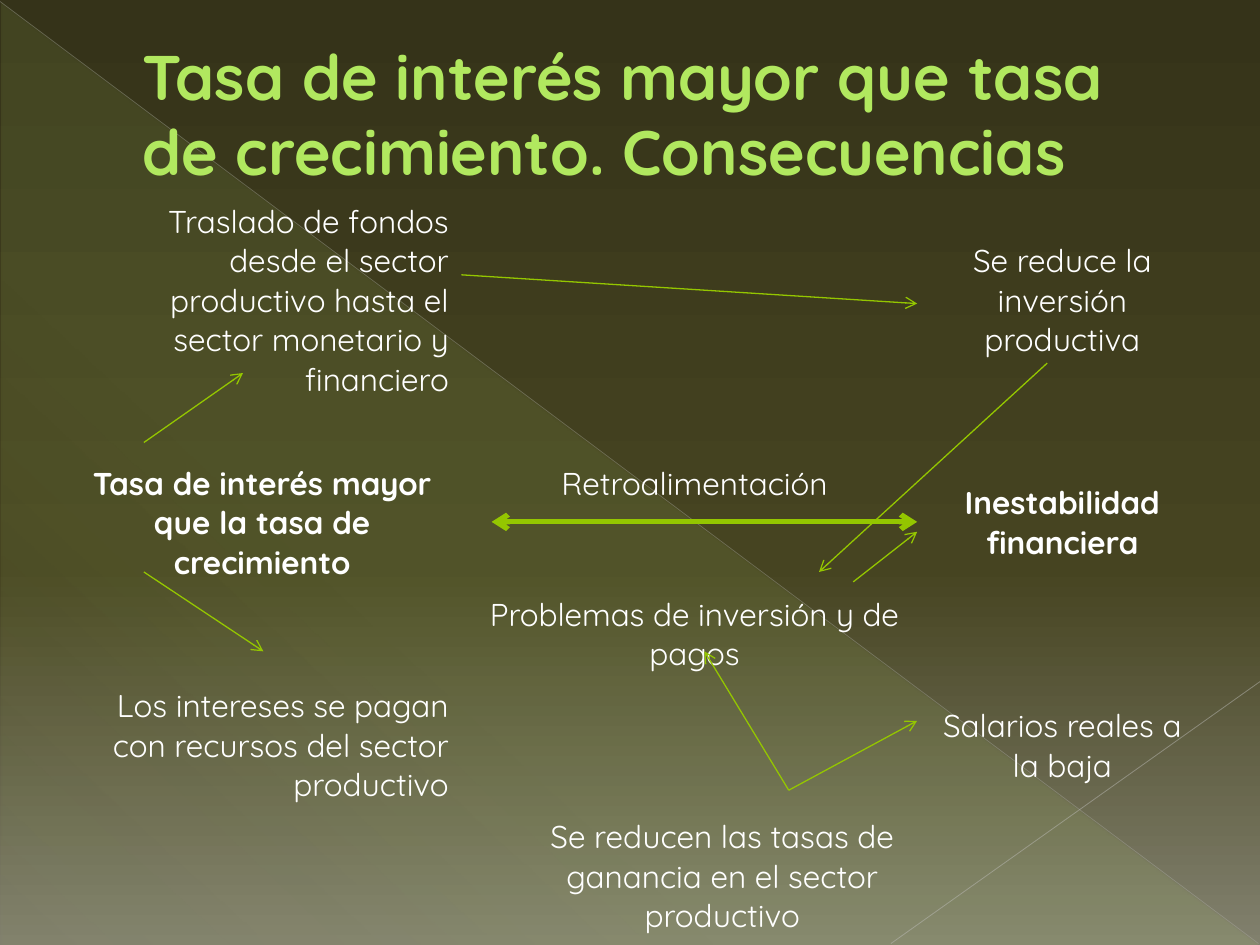
import lxml.etree
import pptx
import pptx.dml.color
import pptx.enum.shapes
import pptx.enum.text
import pptx.oxml.ns
import pptx.util

Cm = pptx.util.Cm
Pt = pptx.util.Pt
Align = pptx.enum.text.PP_ALIGN
Anchor = pptx.enum.text.MSO_ANCHOR

FONT = "Quicksand"
NO_GRID_STYLE = "{2D5ABB26-0587-4C30-8999-92F81FD0307C}"
COLORS = {
    "top": "353319",
    "middle": "464421",
    "bottom": "81806D",
    "glow": "CAF278",
    "long_rule": "B9B9B5",
    "short_rule": "C1C0BD",
    "title": "B1E85F",
    "text": "FFFFFF",
    "arrow": "94C600",
}
COLUMN_WIDTHS = [8.03, 1.12, 4.57, 3.71, 5.43]
ROW_HEIGHTS = [4.24, 1.04, 2.64, 1.85, 2.64, 2.64]
CELLS = [
    (0, 0, 1, "Traslado de fondos desde el sector productivo hasta el sector monetario y financiero",
     Align.RIGHT, Anchor.MIDDLE, False),
    (0, 4, 1, "Se reduce la inversión productiva", Align.CENTER, Anchor.MIDDLE, False),
    (2, 0, 1, "Tasa de interés mayor que la tasa de crecimiento", Align.CENTER, Anchor.MIDDLE, True),
    (2, 1, 3, "Retroalimentación", Align.CENTER, Anchor.TOP, False),
    (2, 4, 1, "Inestabilidad financiera", Align.CENTER, Anchor.MIDDLE, True),
    (3, 1, 3, "Problemas de inversión y de pagos", Align.CENTER, Anchor.MIDDLE, False),
    (4, 0, 1, "Los intereses se pagan con recursos del sector productivo",
     Align.RIGHT, Anchor.MIDDLE, False),
    (4, 4, 1, "Salarios reales a la baja", Align.CENTER, Anchor.MIDDLE, False),
    (5, 2, 2, "Se reducen las tasas de ganancia en el sector productivo",
     Align.CENTER, Anchor.MIDDLE, False),
]
ARROWS = [
    (9.3, 5.54, 18.49, 6.12),
    (2.9, 8.92, 4.9, 7.52),
    (2.9, 11.53, 5.31, 13.13),
    (21.11, 7.32, 16.51, 11.53),
    (15.9, 15.93, 18.49, 14.53),
    (15.9, 15.93, 14.2, 13.13),
    (17.2, 11.73, 18.49, 10.72),
]


def rgb(name):
    return pptx.dml.color.RGBColor.from_string(COLORS[name])


def add_child(parent, tag, **attributes):
    return lxml.etree.SubElement(parent, pptx.oxml.ns.qn(tag), attributes)


def set_gradient(fill, element, stops, angle):
    fill.gradient()
    gradient = element.xpath(".//a:gradFill")[0]
    for child in list(gradient):
        gradient.remove(child)
    stop_list = add_child(gradient, "a:gsLst")
    for position, name, opacity in stops:
        stop = add_child(stop_list, "a:gs", pos=str(position * 1000))
        color = add_child(stop, "a:srgbClr", val=COLORS[name])
        if opacity < 100:
            add_child(color, "a:alpha", val=str(opacity * 1000))
    add_child(gradient, "a:lin", ang=str(angle * 60000), scaled="0")


def add_line(slide, ends, color, width, opacity=100, arrowheads=()):
    connector = slide.shapes.add_connector(
        pptx.enum.shapes.MSO_CONNECTOR.STRAIGHT, *[Cm(value) for value in ends])
    connector.line.color.rgb = rgb(color)
    connector.line.width = Pt(width)
    properties = connector._element.spPr
    if opacity < 100:
        add_child(properties.xpath(".//a:srgbClr")[0], "a:alpha", val=str(opacity * 1000))
    for end in arrowheads:
        add_child(properties.xpath("./a:ln")[0], end, type="arrow")
    add_child(properties, "a:effectLst")


def add_text(paragraph, text, size, color, bold):
    run = paragraph.add_run()
    run.text = text
    run.font.name = FONT
    run.font.size = Pt(size)
    run.font.bold = bold
    run.font.color.rgb = rgb(color)


def add_backdrop(slide):
    set_gradient(slide.background.fill, slide.element,
                 [(0, "top", 100), (60, "middle", 100), (100, "bottom", 100)], 90)
    triangle = slide.shapes.add_shape(
        pptx.enum.shapes.MSO_SHAPE.RIGHT_TRIANGLE, Cm(0.03), Cm(0.05), Cm(25.35), Cm(19))
    triangle.shadow.inherit = False
    triangle.line.fill.background()
    set_gradient(triangle.fill, triangle._element,
                 [(0, "glow", 10), (70, "glow", 8), (100, "glow", 1)], 133)
    add_line(slide, (0, 0.03, 25.37, 19.02), "long_rule", 0.39, 35)
    add_line(slide, (25.4, 13.74, 17.96, 19.02), "short_rule", 0.47, 45)


def add_title(slide, text):
    box = slide.shapes.add_textbox(Cm(1.27), Cm(0.33), Cm(22.86), Cm(3.89))
    frame = box.text_frame
    frame.word_wrap = True
    frame.vertical_anchor = Anchor.MIDDLE
    frame.margin_left = Cm(1.6)
    add_text(frame.paragraphs[0], text, 36, "title", True)


def add_consequences_table(slide):
    shape = slide.shapes.add_table(
        len(ROW_HEIGHTS), len(COLUMN_WIDTHS), Cm(1.27), Cm(3.94),
        Cm(sum(COLUMN_WIDTHS)), Cm(sum(ROW_HEIGHTS)))
    table = shape.table
    table.first_row = False
    table.horz_banding = False
    shape._element.xpath(".//a:tableStyleId")[0].text = NO_GRID_STYLE
    for column, width in zip(table.columns, COLUMN_WIDTHS):
        column.width = Cm(width)
    for row, height in zip(table.rows, ROW_HEIGHTS):
        row.height = Cm(height)
    for cell in table.iter_cells():
        cell.fill.background()
    for row, column, span, text, alignment, anchor, bold in CELLS:
        cell = table.cell(row, column)
        if span > 1:
            cell.merge(table.cell(row, column + span - 1))
        cell.vertical_anchor = anchor
        paragraph = cell.text_frame.paragraphs[0]
        paragraph.alignment = alignment
        add_text(paragraph, text, 18, "text", bold)


def main():
    presentation = pptx.Presentation()
    presentation.slide_width = Cm(25.4)
    presentation.slide_height = Cm(19.05)
    slide = presentation.slides.add_slide(presentation.slide_layouts[6])
    add_backdrop(slide)
    add_title(slide, "Tasa de interés mayor que tasa de crecimiento. Consecuencias")
    add_consequences_table(slide)
    for ends in ARROWS:
        add_line(slide, ends, "arrow", 0.75, arrowheads=["a:tailEnd"])
    add_line(slide, (9.91, 10.52, 18.49, 10.52), "arrow", 3,
             arrowheads=["a:headEnd", "a:tailEnd"])
    presentation.save("out.pptx")


if __name__ == "__main__":
    main()
